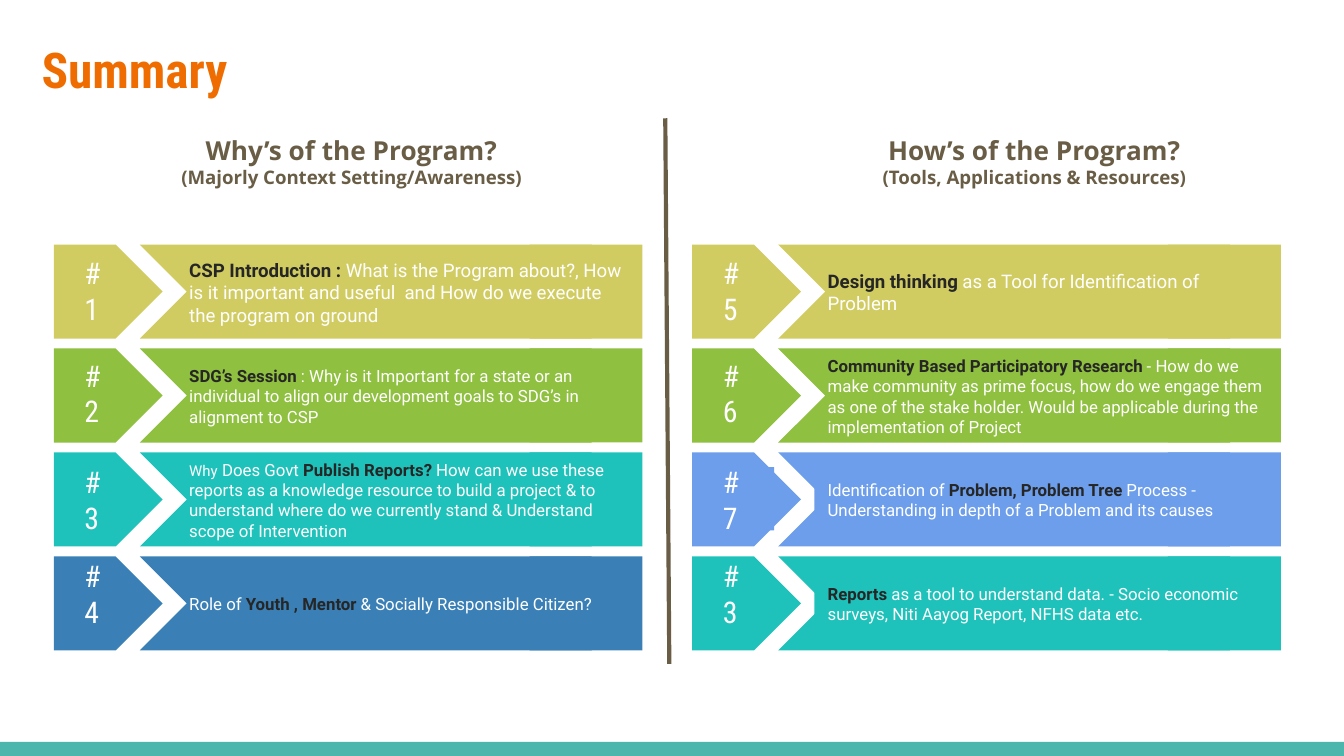
from dataclasses import dataclass

from lxml.etree import SubElement
from pptx import Presentation
from pptx.dml.color import RGBColor
from pptx.enum.shapes import MSO_CONNECTOR, MSO_SHAPE
from pptx.enum.text import MSO_ANCHOR, PP_ALIGN
from pptx.oxml.ns import qn
from pptx.util import Inches, Pt


@dataclass(frozen=True)
class Theme:
    orange: str = "EF6C00"
    brown: str = "695D46"
    dark: str = "262626"
    white: str = "FFFFFF"
    bar: str = "4DB6AC"
    olive: str = "D1CC62"
    green: str = "8FC03F"
    teal: str = "1FC2BA"
    blue: str = "3A80B6"
    sky: str = "6D9EEB"
    head: str = "Open Sans"
    body: str = "Roboto"
    slim: str = "Roboto Condensed"
    title: float = 26.4
    number: float = 16
    heading: float = 14
    large: float = 10
    small: float = 9
    tiny: float = 8


T = Theme()
TOP, LAST, HIGH = 1.82, 4.14, 0.7
PITCH = (LAST - TOP) / 3
NUMBER_TOPS = (1.95, 2.71, 3.5, 4.2)


def run(text, size, color, font, bold=False):
    return text, {"size": Pt(size), "name": font, "bold": bold}, color


def strong(text, size=T.small):
    return run(text, size, T.dark, T.body, True)


def plain(text, size=T.small):
    return run(text, size, T.white, T.body)


COLUMNS = (
    (0.4, (1.21, 2.81), "Why’s of the Program?",
     "(Majorly Context Setting/Awareness)", (
         ("#1", T.olive, [
             strong("CSP Introduction :", T.large),
             plain(" What is the Program about?, How is it important and "
                   "useful  and How do we execute the program on ground",
                   T.large)]),
         ("#2", T.green, [
             strong("SDG’s Session "),
             plain(": Why is it Important for a state or an individual to "
                   "align our development goals to SDG’s in alignment to "
                   "CSP")]),
         ("#3", T.teal, [
             plain("Why", T.tiny), plain(" Does Govt "),
             strong("Publish Reports? "),
             plain("How can we use these reports as a knowledge resource to "
                   "build a project & to understand where do we currently "
                   "stand & Understand scope of Intervention")]),
         ("#4", T.blue, [
             plain("Role of "), strong("Youth , Mentor"),
             plain(" & Socially Responsible Citizen?")]))),
    (5.15, (6.39, 2.61), "How’s of the Program?",
     "(Tools, Applications & Resources)", (
         ("#5", T.olive, [
             strong("Design thinking ", T.large),
             plain("as a Tool for Identification of Problem", T.large)]),
         ("#6", T.green, [
             strong("Community Based Participatory Research"),
             plain(" - How do we make community as prime focus, how do we "
                   "engage them as one of the stake holder. Would be "
                   "applicable during the implementation of Project")]),
         ("#7", T.sky, [
             plain("Identification of "), strong("Problem, Problem Tree "),
             plain("Process - Understanding in depth of a Problem and its "
                   "causes")]),
         ("#3", T.teal, [
             strong("Reports"),
             plain(" as a tool to understand data. - Socio economic surveys, "
                   "Niti Aayog Report, NFHS data etc.")]))),
)
FILLED = (T.sky, T.teal)


def box(*sizes):
    return [Inches(n) for n in sizes]


def write(frame, paras, pad=0.1, anchor=MSO_ANCHOR.MIDDLE,
          align=PP_ALIGN.LEFT):
    """Fill a text frame with paragraphs, each a list of runs."""
    form = {"word_wrap": True, "vertical_anchor": anchor,
            "margin_left": Inches(0.1), "margin_right": Inches(0.1),
            "margin_top": Inches(pad), "margin_bottom": Inches(pad)}
    for key, value in form.items():
        setattr(frame, key, value)
    for i, runs in enumerate(paras):
        para = frame.add_paragraph() if i else frame.paragraphs[0]
        para.alignment = align
        for text, style, color in runs:
            part = para.add_run()
            part.text = text
            for key, value in style.items():
                setattr(part.font, key, value)
            part.font.color.rgb = RGBColor.from_string(color)


def label(shapes, place, paras, **form):
    write(shapes.add_textbox(*box(*place)).text_frame, paras, **form)


def block(shapes, kind, place, color):
    shape = shapes.add_shape(kind, *box(*place))
    shape.shadow.inherit = False
    shape.fill.solid()
    shape.fill.fore_color.rgb = RGBColor.from_string(color)
    shape.line.fill.background()
    return shape


def divide(shapes):
    line = shapes.add_connector(MSO_CONNECTOR.STRAIGHT,
                                *box(4.95, 0.88, 4.98, 4.94))
    line.line.color.rgb = RGBColor.from_string(T.brown)
    line.line.width = Pt(2.25)
    SubElement(line._element.spPr, qn("a:effectLst"))


def banner(slide, left, row, number, color, runs):
    """Draw one numbered arrow with its text, as a group."""
    shapes = slide.shapes.add_group_shape().shapes
    top = TOP + row * PITCH
    for kind, shift, wide in ((MSO_SHAPE.PENTAGON, 0, 0.81),
                              (MSO_SHAPE.CHEVRON, 0.64, 3.71),
                              (MSO_SHAPE.RECTANGLE, 3.54, 0.84)):
        block(shapes, kind, (left + shift, top, wide, HIGH), color)
    place = left + 0.91, top + 0.17, 3.46, 0.37
    if left > 5 and color in FILLED:
        panel = block(shapes, MSO_SHAPE.RECTANGLE, place, color)
        write(panel.text_frame, [runs])
    else:
        label(shapes, place, [runs])
    if color == T.sky:
        block(shapes, MSO_SHAPE.RECTANGLE,
              (left + 0.2, top + 0.11, 0.41, 0.47), color)
    label(shapes, (left + 0.13, NUMBER_TOPS[row], 0.41, 0.43),
          [[run(number, T.number, T.white, T.slim)]], pad=0.05)


def column(slide, left, span, head, note, rows):
    label(slide.shapes, (span[0], 0.9, span[1], 0.61),
          [[run(head, T.heading, T.brown, T.head, True)],
           [run(note, T.large, T.brown, T.head, True)]],
          anchor=MSO_ANCHOR.TOP, align=PP_ALIGN.CENTER)
    for row, item in enumerate(rows):
        banner(slide, left, row, *item)


def main():
    deck = Presentation()
    deck.slide_width = Inches(10)
    deck.slide_height = deck.slide_width * 9 // 16
    slide = deck.slides.add_slide(deck.slide_layouts[5])
    block(slide.shapes, MSO_SHAPE.RECTANGLE, (0, 5.52, 10, 0.11), T.bar)
    title = slide.shapes.title
    title.left, title.top, title.width, title.height = box(
        0.21, 0.19, 9.32, 0.77)
    write(title.text_frame,
          [[run("Summary", T.title, T.orange, T.slim, True)]],
          anchor=MSO_ANCHOR.TOP)
    divide(slide.shapes)
    for part in COLUMNS:
        column(slide, *part)
    deck.save("out.pptx")


if __name__ == "__main__":
    main()
